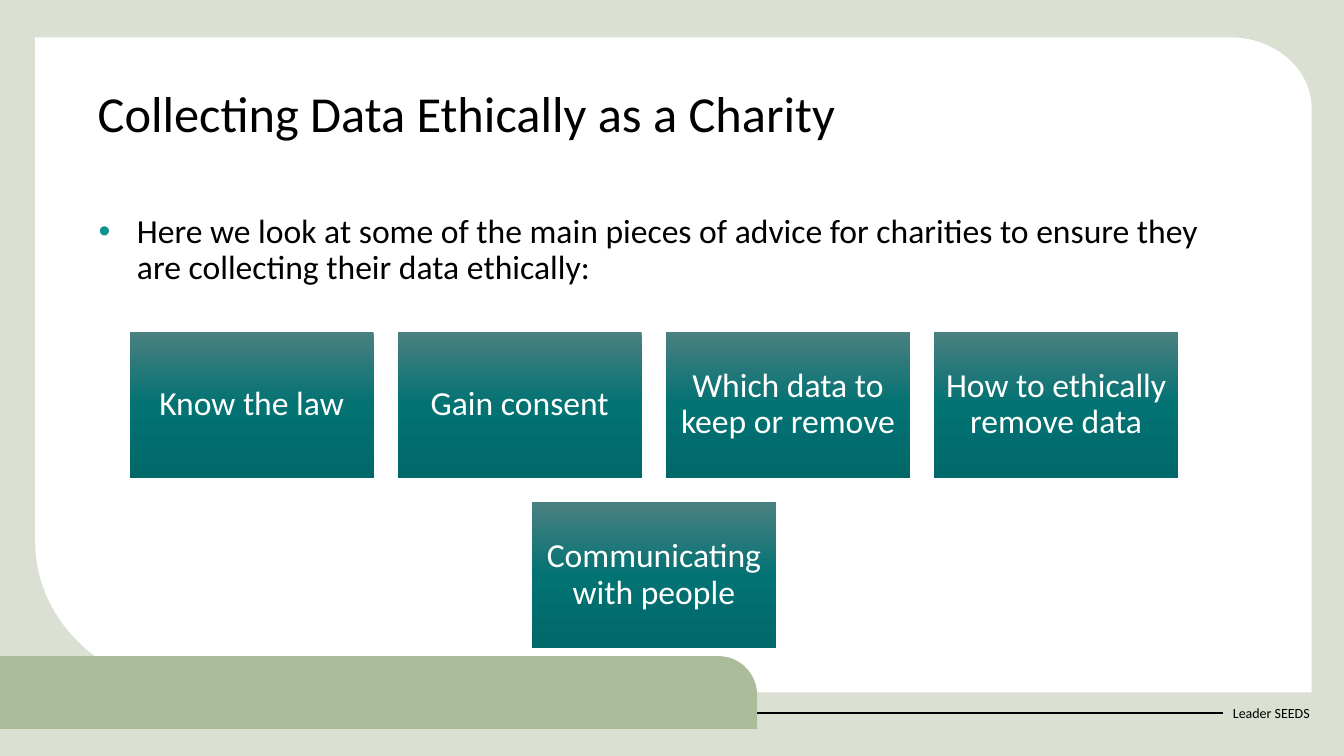
from copy import deepcopy
from math import cos, radians, sin

from pptx import Presentation
from pptx.dml.color import RGBColor
from pptx.enum.shapes import MSO_CONNECTOR, MSO_SHAPE
from pptx.enum.text import MSO_ANCHOR, PP_ALIGN
from pptx.oxml.ns import qn
from pptx.util import Inches, Pt
from lxml.etree import SubElement

TITLE = "Collecting Data Ethically as a Charity"
INTRO = ("Here we look at some of the main pieces of advice for charities "
         "to ensure they are collecting their data ethically:")
FOOTER = "Leader SEEDS"
ROWS = [
    ["Know the law", "Gain consent", "Which data to keep or remove",
     "How to ethically remove data"],
    ["Communicating with people"],
]
SHADES = ["4B8081", "037273", "006869"]
PAPER, SAGE, LEAF, TEAL, INK = "FFFFFF", "DAE0D2", "AABC99", "0D9390", "000000"
MIDDLE, TOP = 6.485, 3.29
WIDE, HIGH, GAP = 2.42, 1.45, 0.24


def color(code):
    """Turn a hex string into a colour."""
    return RGBColor.from_string(code)


def paint(shape, code):
    """Give a shape a flat fill with no line or shadow."""
    shape.shadow.inherit = False
    shape.fill.solid()
    shape.fill.fore_color.rgb = color(code)
    shape.line.fill.background()


def arc(x, y, wide, high, start):
    """List the points of a clockwise quarter ellipse."""
    turns = [radians(start + step * 3) for step in range(31)]
    return [(x + wide * cos(t), y + high * sin(t)) for t in turns]


def outline(slide, points, code):
    """Draw a filled closed shape through points in inches."""
    first, *rest = [(Inches(x), Inches(y)) for x, y in points]
    form = slide.shapes.build_freeform(*first)
    form.add_line_segments(rest, close=True)
    paint(form.convert_to_shape(), code)


def write(shape, text, size=24, ink=INK, align=PP_ALIGN.LEFT,
          anchor=MSO_ANCHOR.TOP, inset=0.1, edge=0.05, line=0.9, bullet=None):
    """Put one formatted paragraph in a shape."""
    frame = shape.text_frame
    frame.word_wrap = True
    frame.vertical_anchor = anchor
    frame.margin_left = frame.margin_right = Inches(inset)
    frame.margin_top = frame.margin_bottom = Inches(edge)
    para = frame.paragraphs[0]
    para.text = text
    para.alignment = align
    para.line_spacing = line
    if bullet:
        props = para._p.get_or_add_pPr()
        props.set("marL", str(Inches(0.39)))
        props.set("indent", str(Inches(-0.38)))
        tint = SubElement(props, qn("a:buClr"))
        SubElement(tint, qn("a:srgbClr"), val=bullet)
        SubElement(props, qn("a:buFont"), typeface="Arial")
        SubElement(props, qn("a:buChar"), char="•")
    font = para.runs[0].font
    font.name, font.size = "Calibri", Pt(size)
    font.color.rgb = color(ink)


def label(slide, place, text, **style):
    """Add a text box at a place in inches."""
    write(slide.shapes.add_textbox(*map(Inches, place)), text, **style)


def tile(slide, x, y, text):
    """Add one shaded box of advice."""
    box = slide.shapes.add_shape(
        MSO_SHAPE.RECTANGLE, *map(Inches, (x, y, WIDE, HIGH)))
    paint(box, SHADES[0])
    box.fill.gradient()
    box.fill.gradient_angle = 270
    stops = box._element.spPr.find(qn("a:gradFill")).find(qn("a:gsLst"))
    stops.insert(1, deepcopy(stops[0]))
    for stop, code, spot in zip(box.fill.gradient_stops, SHADES, (0, 0.5, 1)):
        stop.color.rgb = color(code)
        stop.position = spot
    write(box, text, ink=PAPER, align=PP_ALIGN.CENTER,
          anchor=MSO_ANCHOR.MIDDLE, edge=0.1)


def main():
    """Build the slide and save it."""
    deck = Presentation()
    deck.slide_width, deck.slide_height = Inches(13.33), Inches(7.5)
    slide = deck.slides.add_slide(deck.slide_layouts[6])

    back = slide.shapes.add_shape(
        MSO_SHAPE.RECTANGLE, 0, 0, deck.slide_width, deck.slide_height)
    paint(back, SAGE)
    outline(slide, [(0.35, 0.37), *arc(12.2, 1.08, 0.81, 0.71, -90),
                    (13.01, 6.87), *arc(2.05, 5.38, 1.7, 1.49, 90)], PAPER)

    label(slide, (12.13, 6.87, 1.01, 0.4), FOOTER, size=10, line=1,
          anchor=MSO_ANCHOR.MIDDLE)
    rule = slide.shapes.add_connector(
        MSO_CONNECTOR.STRAIGHT, *map(Inches, (-0.01, 7.07, 12.13, 7.07)))
    rule.line.color.rgb = color(INK)
    rule.line.width = Pt(1.5)
    SubElement(rule._element.spPr, qn("a:effectLst"))
    outline(slide, [(0, 7.23), (0, 6.51), *arc(7.13, 6.9, 0.38, 0.39, -90),
                    (7.51, 7.23)], LEAF)

    label(slide, (0.87, 0.83, 11.59, 0.88), TITLE, size=36)
    label(slide, (0.87, 2.08, 11.59, 1), INTRO, bullet=TEAL)

    for row, names in enumerate(ROWS):
        left = MIDDLE - (len(names) * (WIDE + GAP) - GAP) / 2
        for col, name in enumerate(names):
            tile(slide, left + col * (WIDE + GAP),
                 TOP + row * (HIGH + GAP), name)

    deck.save("out.pptx")


if __name__ == "__main__":
    main()
